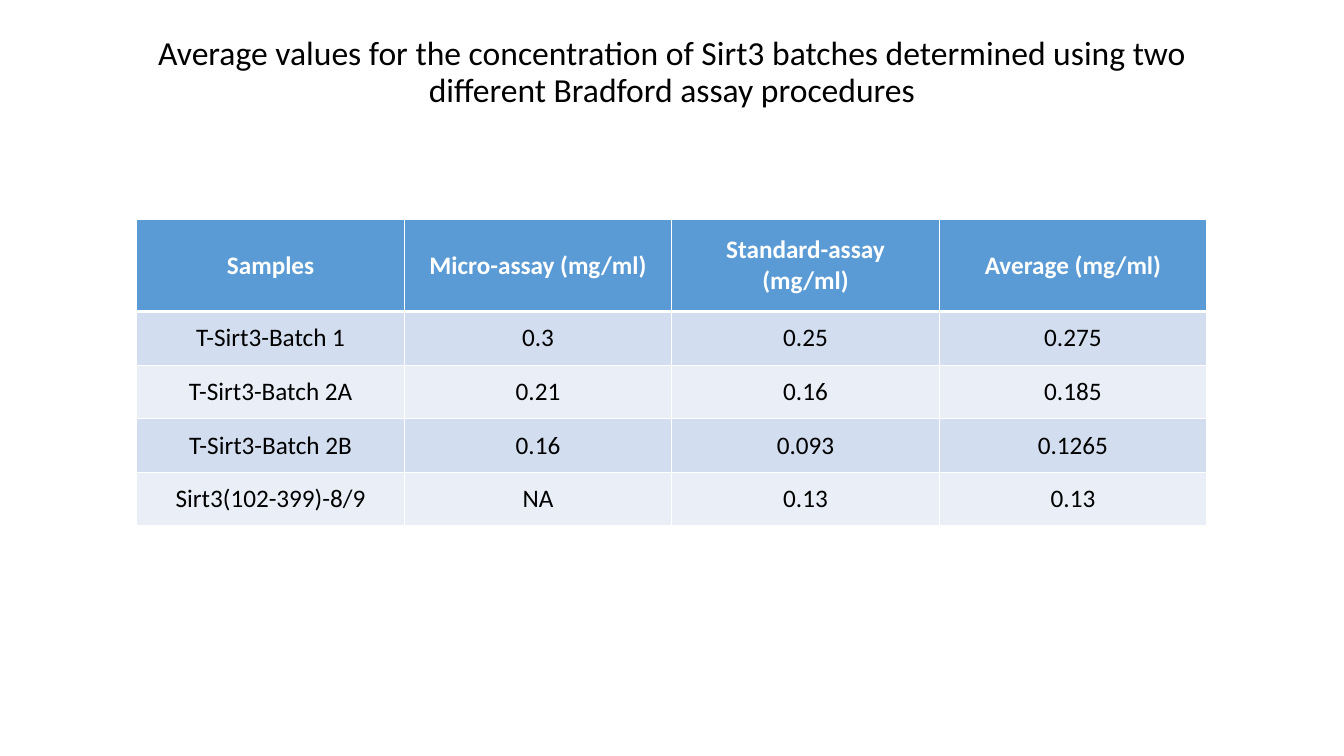
"""Build a slide with a table of average Sirt3 batch concentrations."""
from lxml.etree import SubElement
from pptx import Presentation
from pptx.dml.color import RGBColor
from pptx.enum.text import MSO_ANCHOR as Anchor, PP_ALIGN as Align
from pptx.oxml.ns import qn
from pptx.util import Cm, Pt

FONT = "Calibri"
COLOURS = {
    "text": "000000",
    "white": "FFFFFF",
    "header": "5B9BD5",
    "odd": "D2DEEF",
    "even": "EAEFF7",
}
TITLE = (
    "Average values for the concentration of Sirt3 batches "
    "determined using two different Bradford assay procedures"
)
ROWS = [
    ["Samples", "Micro-assay (mg/ml)", "Standard-assay (mg/ml)", "Average (mg/ml)"],
    ["T-Sirt3-Batch 1", "0.3", "0.25", "0.275"],
    ["T-Sirt3-Batch 2A", "0.21", "0.16", "0.185"],
    ["T-Sirt3-Batch 2B", "0.16", "0.093", "0.1265"],
    ["Sirt3(102-399)-8/9", "NA", "0.13", "0.13"],
]
COLUMN_WIDTH = Cm(6.74)
HEADER_HEIGHT = Cm(2.31)
ROW_HEIGHT = Cm(1.35)


def write(frame, text, size=18, colour="text", bold=False, spacing=1.0):
    para = frame.paragraphs[0]
    para.alignment = Align.CENTER
    para.line_spacing = spacing
    span = para.add_run()
    span.text = text
    span.font.name = FONT
    span.font.size = Pt(size)
    span.font.bold = bold
    span.font.color.rgb = RGBColor.from_string(COLOURS[colour])


def add_title(page):
    title = page.shapes.title
    title.left, title.top = Cm(2.33), Cm(0)
    title.width, title.height = Cm(29.21), Cm(3.68)
    title.text_frame.word_wrap = True
    title.text_frame.vertical_anchor = Anchor.MIDDLE
    write(title.text_frame, TITLE, size=24, spacing=0.9)


def set_borders(cell, top=1, bottom=1):
    properties = cell._tc.get_or_add_tcPr()
    for side, width in {"L": 1, "R": 1, "T": top, "B": bottom}.items():
        line = SubElement(properties, qn(f"a:ln{side}"), w=str(Pt(width)))
        fill = SubElement(line, qn("a:solidFill"))
        SubElement(fill, qn("a:srgbClr"), val=COLOURS["white"])


def format_cell(cell, text, row):
    is_header = row == 0
    set_borders(cell, top=3 if row == 1 else 1, bottom=3 if is_header else 1)
    band = "header" if is_header else "odd" if row % 2 else "even"
    cell.fill.solid()
    cell.fill.fore_color.rgb = RGBColor.from_string(COLOURS[band])
    cell.vertical_anchor = Anchor.MIDDLE
    write(cell.text_frame, text, colour="white" if is_header else "text", bold=is_header)


def add_results(page):
    columns = len(ROWS[0])
    height = HEADER_HEIGHT + ROW_HEIGHT * (len(ROWS) - 1)
    table = page.shapes.add_table(
        len(ROWS), columns, Cm(3.45), Cm(5.54), COLUMN_WIDTH * columns, height
    ).table
    for column in table.columns:
        column.width = COLUMN_WIDTH
    for row, texts in enumerate(ROWS):
        table.rows[row].height = ROW_HEIGHT if row else HEADER_HEIGHT
        for column, text in enumerate(texts):
            format_cell(table.cell(row, column), text, row)


def main():
    deck = Presentation()
    deck.slide_width, deck.slide_height = Cm(33.87), Cm(19.05)
    page = deck.slides.add_slide(deck.slide_layouts[5])
    add_title(page)
    add_results(page)
    deck.save("out.pptx")


if __name__ == "__main__":
    main()
